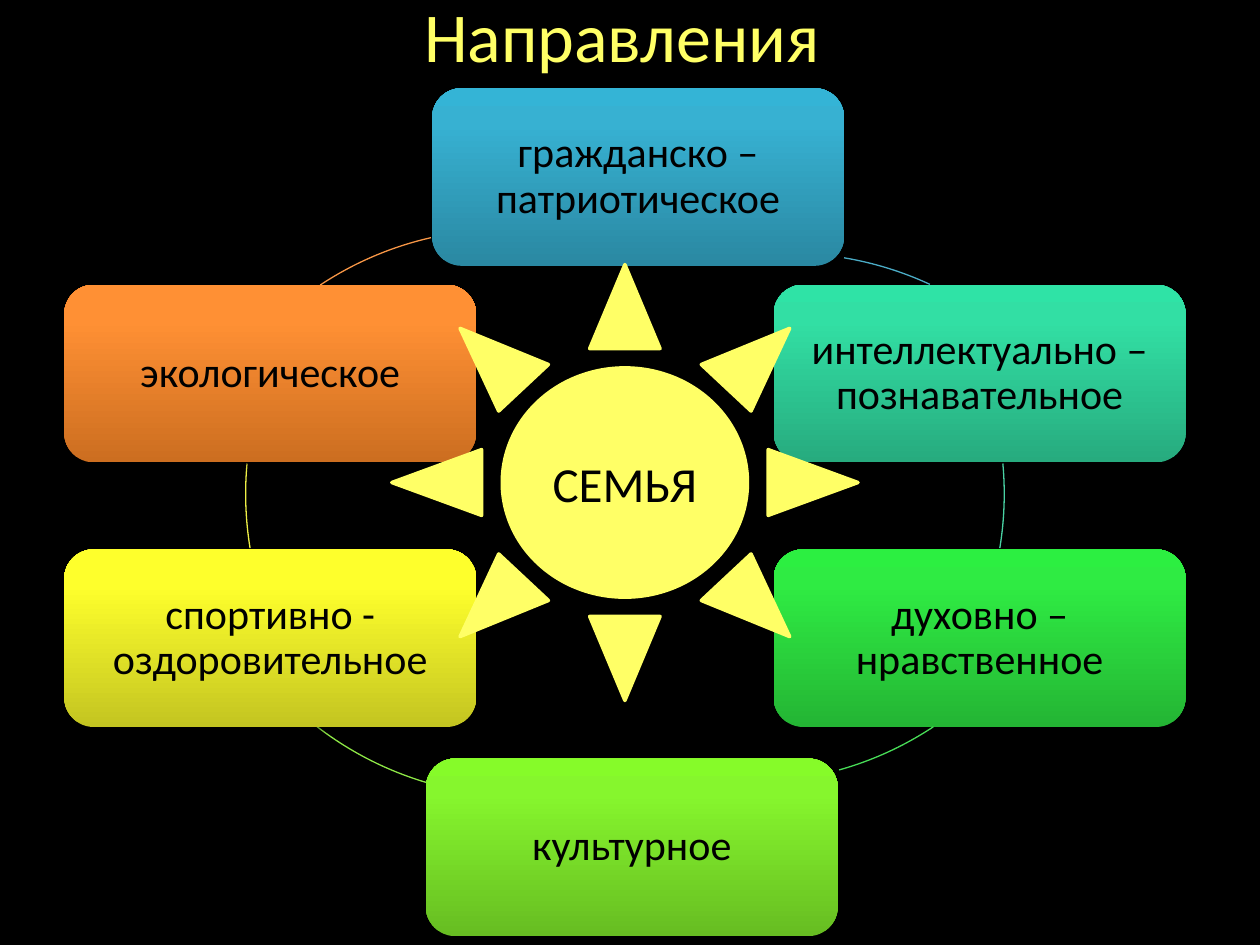
import copy
from dataclasses import dataclass

import lxml.etree
import pptx
import pptx.dml.color
import pptx.enum.shapes
import pptx.enum.text
import pptx.oxml.ns
import pptx.util

COLUMNS, ROWS = 100, 75
CELL = pptx.util.Inches(0.1)
CARD_WIDTH, CARD_HEIGHT = 32.7, 14.1
LEFT, RIGHT = 5.1, 61.4
UPPER, LOWER = 22.6, 43.6
RING = 53.2


@dataclass(frozen=True)
class Theme:
    font: str = "Calibri"
    background: str = "000000"
    ink: str = "000000"
    sun: str = "FFFF66"
    title_size: int = 40
    sun_size: int = 28
    card_size: int = 24
    ring_width: float = 0.75
    sun_width: float = 2


THEME = Theme()

DIRECTIONS = [
    ("гражданско – патриотическое", (34.3, 7), ("2A88A2", "37B1D2", "34B4D6")),
    ("интеллектуально – познавательное", (RIGHT, UPPER), ("27AB7E", "32DFA4", "2FE3A6")),
    ("духовно – нравственное", (RIGHT, LOWER), ("24B534", "2FEB43", "2CEF41")),
    ("культурное", (33.8, 60.2), ("67BD22", "86F62D", "86FB29")),
    ("спортивно - оздоровительное", (LEFT, LOWER), ("C4C521", "FEFF2C", "FEFF2D")),
    ("экологическое", (LEFT, UPPER), ("CC6E20", "FF9034", "FF9136")),
]

RING_ARCS = [
    ((36, 20.1), (279.5, 294.9), "4BACC6"),
    ((26.5, 12.6), (354.8, 9.3), "49D1A3"),
    ((32.8, 8.9), (56.5, 74.3), "47DC57"),
    ((14.8, 10), (106.6, 127.7), "8DE646"),
    ((19.5, 12.6), (170.7, 185.2), "EEEF46"),
    ((13.5, 18.2), (236.5, 257.2), "F79646"),
]


def grid(*cells):
    return [round(cell * CELL) for cell in cells]


def rgb(code):
    return pptx.dml.color.RGBColor.from_string(code)


def write(frame, words, size, color):
    frame.text = words
    font = frame.paragraphs[0].runs[0].font
    font.name, font.size = THEME.font, pptx.util.Pt(size)
    font.color.rgb = rgb(color)


def center(frame):
    frame.word_wrap = True
    frame.vertical_anchor = pptx.enum.text.MSO_ANCHOR.MIDDLE
    frame.paragraphs[0].alignment = pptx.enum.text.PP_ALIGN.CENTER


def add_preset(slide, kind, *cells):
    shape = slide.shapes.add_shape(kind, *grid(*cells))
    shape.shadow.inherit = False
    return shape


def shade(card, colors):
    card.fill.gradient()
    card.fill.gradient_angle = 90
    stops = card.element.spPr.find(".//" + pptx.oxml.ns.qn("a:gsLst"))
    stops.append(copy.deepcopy(stops[-1]))
    for stop, position, color in zip(card.fill.gradient_stops, (0, 0.8, 1), colors):
        stop.position = position
        stop.color.rgb = rgb(color)


def cast_shadow(card):
    qn = pptx.oxml.ns.qn
    effects = card.element.spPr.find(qn("a:effectLst"))
    shadow = lxml.etree.SubElement(
        effects, qn("a:outerShdw"), blurRad=str(pptx.util.Pt(3.1)),
        dist=str(pptx.util.Pt(1.8)), dir="5400000", rotWithShape="0")
    color = lxml.etree.SubElement(shadow, qn("a:srgbClr"), val="000000")
    lxml.etree.SubElement(color, qn("a:alpha"), val="35000")


def add_direction(slide, words, corner, colors):
    card = add_preset(slide, pptx.enum.shapes.MSO_SHAPE.ROUNDED_RECTANGLE,
                      *corner, CARD_WIDTH, CARD_HEIGHT)
    shade(card, colors)
    card.line.fill.background()
    cast_shadow(card)
    frame = card.text_frame
    write(frame, words, THEME.card_size, THEME.ink)
    center(frame)
    frame.paragraphs[0].line_spacing = 0.9
    inset = pptx.util.Inches(0.17)
    frame.margin_left = frame.margin_right = inset
    frame.margin_top = frame.margin_bottom = inset


def add_ring_arc(slide, corner, angles, color):
    arc = add_preset(slide, pptx.enum.shapes.MSO_SHAPE.ARC, *corner, RING, RING)
    for index, degrees in enumerate(angles):
        arc.adjustments[index] = degrees * 0.6
    arc.fill.background()
    arc.line.color.rgb = rgb(color)
    arc.line.width = pptx.util.Pt(THEME.ring_width)


def add_title(slide, words):
    title = slide.shapes.add_textbox(*grid(32.7, -1.1, 33.7, 7.7))
    frame = title.text_frame
    frame.word_wrap = False
    frame.auto_size = pptx.enum.text.MSO_AUTO_SIZE.SHAPE_TO_FIT_TEXT
    write(frame, words, THEME.title_size, THEME.sun)


def add_sun(slide, words):
    sun = add_preset(slide, pptx.enum.shapes.MSO_SHAPE.SUN, 31.1, 21, 37, 34.6)
    sun.adjustments[0] = 0.237
    sun.fill.solid()
    sun.fill.fore_color.rgb = rgb(THEME.sun)
    sun.line.color.rgb = rgb(THEME.sun)
    sun.line.width = pptx.util.Pt(THEME.sun_width)
    write(sun.text_frame, words, THEME.sun_size, THEME.ink)
    center(sun.text_frame)


def main():
    deck = pptx.Presentation()
    deck.slide_width, deck.slide_height = grid(COLUMNS, ROWS)
    slide = deck.slides.add_slide(deck.slide_layouts[6])
    slide.background.fill.solid()
    slide.background.fill.fore_color.rgb = rgb(THEME.background)
    for direction, ring_arc in zip(DIRECTIONS, RING_ARCS):
        add_direction(slide, *direction)
        add_ring_arc(slide, *ring_arc)
    add_title(slide, "Направления")
    add_sun(slide, "СЕМЬЯ")
    deck.save("out.pptx")


if __name__ == "__main__":
    main()
